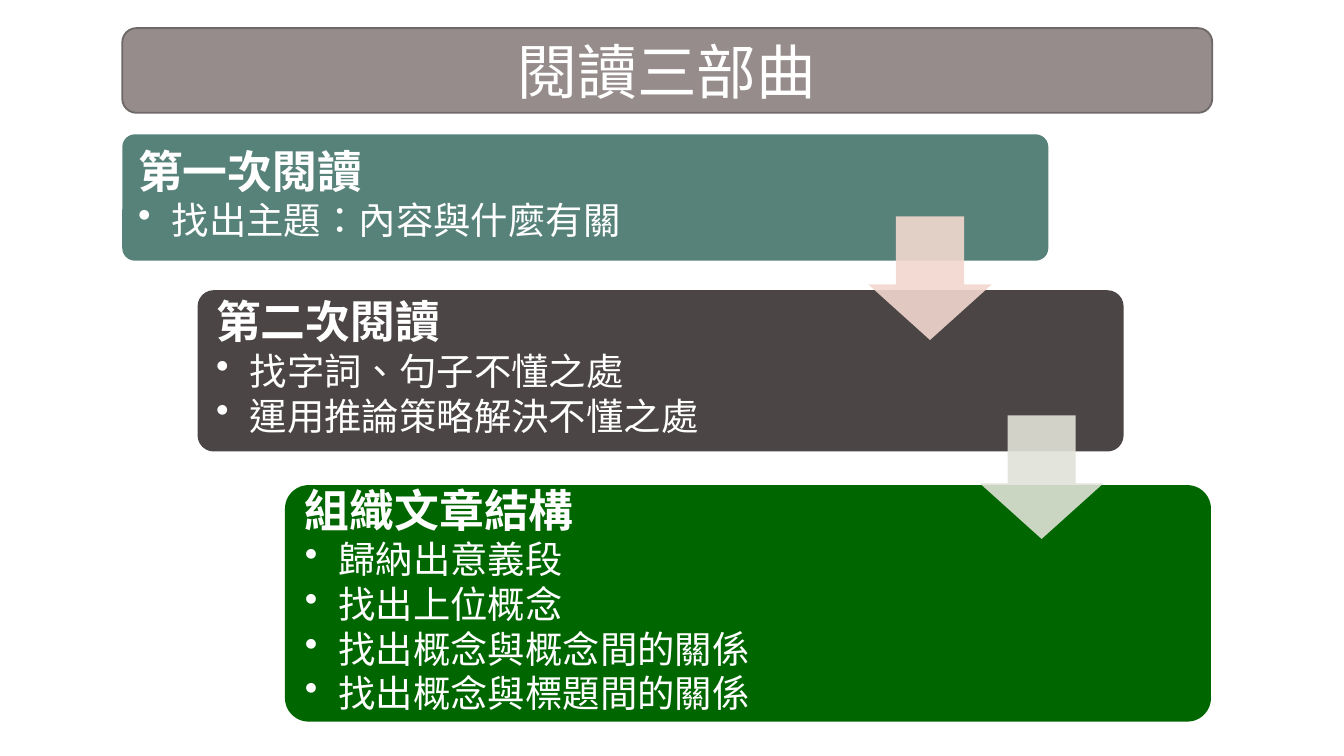
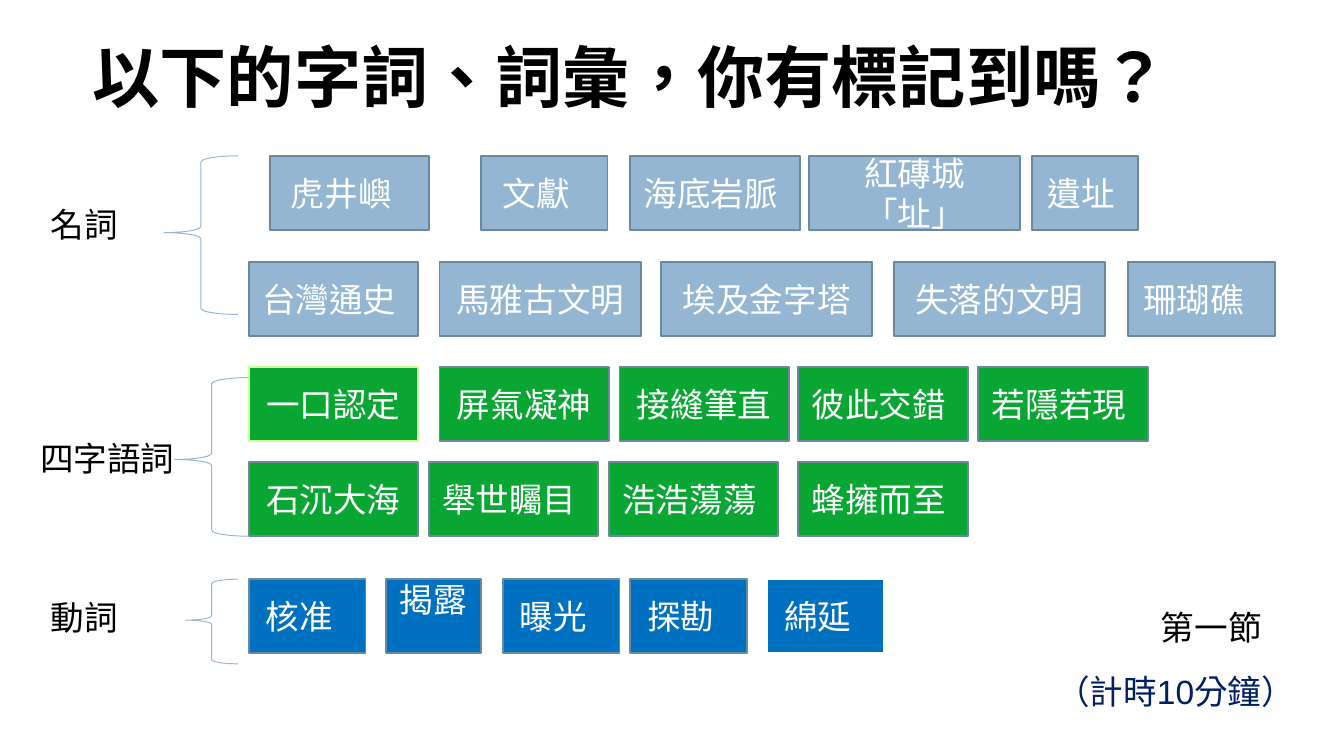
"""Build two slides on reading in three steps and on marking vocabulary."""
from lxml import etree
from pptx import Presentation
from pptx.dml.color import RGBColor
from pptx.enum.shapes import MSO_SHAPE
from pptx.enum.text import MSO_ANCHOR, MSO_AUTO_SIZE, PP_ALIGN
from pptx.oxml.ns import qn
from pptx.util import Inches, Pt

FONT = "Arial"
LANGUAGE = "zh-TW"
WHITE = RGBColor(0xFF, 0xFF, 0xFF)
BLACK = RGBColor(0x00, 0x00, 0x00)
NAVY = RGBColor(0x00, 0x20, 0x60)
TAUPE = RGBColor(0x96, 0x8C, 0x8C)
TAUPE_EDGE = RGBColor(0x6F, 0x68, 0x68)
TEAL = RGBColor(0x57, 0x82, 0x79)
CHARCOAL = RGBColor(0x4C, 0x45, 0x45)
DARK_GREEN = RGBColor(0x00, 0x66, 0x00)
PINK = RGBColor(0xF2, 0xD8, 0xCF)
SAGE = RGBColor(0xE1, 0xE2, 0xD8)
SKY = RGBColor(0x94, 0xB6, 0xD2)
SLATE = RGBColor(0x6D, 0x87, 0x9B)
GREEN = RGBColor(0x0A, 0xA6, 0x33)
BLUE = RGBColor(0x00, 0x70, 0xC0)
LIME = RGBColor(0xCC, 0xFF, 0x99)

CARD_WIDTH = 6.89
STEPS = [
    (0.91, 1, 0.94, TEAL, (0.93, 1.03, 5.39, 0.88),
     "第一次閱讀", ["找出主題：內容與什麼有關"]),
    (1.47, 2.16, 1.2, CHARCOAL, (1.51, 2.19, 5.29, 1.13),
     "第二次閱讀", ["找字詞、句子不懂之處", "運用推論策略解決不懂之處"]),
    (2.12, 3.61, 1.76, DARK_GREEN, (2.17, 3.66, 5.26, 1.66),
     "組織文章結構",
     ["歸納出意義段", "找出上位概念", "找出概念與概念間的關係", "找出概念與標題間的關係"]),
]
STEP_ARROWS = [(6.46, 1.61, PINK), (7.29, 3.09, SAGE)]

WORD_HEIGHT = 0.55
WORD_ROWS = [
    (1.16, SKY, [("虎井嶼", 2.01, 1.18), ("文獻", 3.58, 0.94), ("海底岩脈", 4.69, 1.26),
                 ("紅磚城「址」", 6.02, 1.57), ("遺址", 7.68, 0.79)]),
    (1.95, SKY, [("台灣通史", 1.85, 1.26), ("馬雅古文明", 3.27, 1.5), ("埃及金字塔", 4.92, 1.57),
                 ("失落的文明", 6.65, 1.57), ("珊瑚礁", 8.39, 1.1)]),
    (2.73, GREEN, [("一口認定", 1.85, 1.26), ("屏氣凝神", 3.27, 1.26), ("接縫筆直", 4.61, 1.26),
                   ("彼此交錯", 5.94, 1.26), ("若隱若現", 7.28, 1.26)]),
    (3.44, GREEN, [("石沉大海", 1.85, 1.26), ("舉世矚目", 3.19, 1.26), ("浩浩蕩蕩", 4.53, 1.26),
                   ("蜂擁而至", 5.94, 1.26)]),
    (4.31, BLUE, [("核准", 1.85, 0.87), ("揭露", 2.87, 0.71), ("曝光", 3.74, 0.87),
                  ("探勘", 4.69, 0.87), ("綿延", 5.71, 0.87)]),
]
CENTRED_WORDS = {"紅磚城「址」", "馬雅古文明", "埃及金字塔", "失落的文明",
                 "一口認定", "屏氣凝神", "接縫筆直", "石沉大海", "揭露"}
SPECIAL_EDGES = {"一口認定": LIME, "綿延": WHITE}
TIGHT_WIDTHS = {0.79, 1.26}
RAISED_FRAME = {"vertical_anchor": MSO_ANCHOR.TOP, "margin_top": 0}

BRACES = [
    ((1.22, 1.16, 0.55, 1.18), 0.484),
    ((1.3, 2.81, 0.55, 1.18), 0.516),
    ((1.38, 4.31, 0.39, 0.63), 0.484),
]
LABELS = [
    ("名詞", (0.28, 1.47, 1.02, 0.4), BLACK),
    ("四字語詞", (0.2, 3.21, 1.26, 0.4), BLACK),
    ("動詞", (0.28, 4.39, 1.02, 0.4), BLACK),
    ("第一節", (8.54, 4.47, 1.26, 0.4), BLACK),
    ("（計時10分鐘）", (7.76, 4.94, 2, 0.4), NAVY),
]


def apply_format(target, values):
    """Set every attribute named in values on target."""
    for name, value in values.items():
        setattr(target, name, value)


def add_run(paragraph, text, size, color, bold=False):
    """Append one formatted run to a paragraph."""
    run = paragraph.add_run()
    run.text = text
    apply_format(run.font, {"name": FONT, "size": Pt(size), "bold": bold})
    run.font.color.rgb = color
    run._r.get_or_add_rPr().set("lang", LANGUAGE)


def add_figure(slide, kind, place, fill=None, edge=None, edge_width=1, adjust=()):
    """Add a flat preset shape with optional fill, edge and adjustments."""
    figure = slide.shapes.add_shape(kind, *map(Inches, place))
    figure.shadow.inherit = False
    for index, value in enumerate(adjust):
        figure.adjustments[index] = value
    if fill is None:
        figure.fill.background()
    else:
        figure.fill.solid()
        figure.fill.fore_color.rgb = fill
    if edge is None:
        figure.line.fill.background()
    else:
        figure.line.color.rgb = edge
        figure.line.width = Pt(edge_width)
    return figure


def write_centred(figure, text, size):
    """Write white text in the middle of a shape."""
    frame = figure.text_frame
    apply_format(frame, {"word_wrap": True, "vertical_anchor": MSO_ANCHOR.MIDDLE})
    paragraph = frame.paragraphs[0]
    paragraph.alignment = PP_ALIGN.CENTER
    add_run(paragraph, text, size, WHITE)


def add_label(slide, text, place, size, color, bold=False):
    """Add a one-paragraph text box that grows with its text."""
    frame = slide.shapes.add_textbox(*map(Inches, place)).text_frame
    apply_format(frame, {"word_wrap": True, "auto_size": MSO_AUTO_SIZE.SHAPE_TO_FIT_TEXT})
    add_run(frame.paragraphs[0], text, size, color, bold)


def add_bullet(paragraph):
    """Give a paragraph a hanging round bullet."""
    paragraph.level = 1
    properties = paragraph._p.get_or_add_pPr()
    properties.set("marL", str(Inches(0.25)))
    properties.set("indent", str(-Inches(0.25)))
    etree.SubElement(properties, qn("a:buChar")).set("char", "•")


def add_step(slide, left, top, height, fill, text_place, heading, tasks):
    """Add a reading step: rounded card, heading and bulleted tasks."""
    add_figure(slide, MSO_SHAPE.ROUNDED_RECTANGLE, (left, top, CARD_WIDTH, height),
               fill, adjust=(0.1,))
    frame = slide.shapes.add_textbox(*map(Inches, text_place)).text_frame
    apply_format(frame, {
        "word_wrap": True, "vertical_anchor": MSO_ANCHOR.MIDDLE,
        "margin_top": Inches(0.1), "margin_bottom": Inches(0.1),
    })
    title = frame.paragraphs[0]
    title.line_spacing = Pt(24)
    add_run(title, heading, 24, WHITE, bold=True)
    for task in tasks:
        paragraph = frame.add_paragraph()
        paragraph.line_spacing = Pt(24)
        add_bullet(paragraph)
        add_run(paragraph, task, 20, WHITE)


def add_step_arrow(slide, left, top, fill):
    """Add a slightly transparent arrow leading to the next step."""
    arrow = add_figure(slide, MSO_SHAPE.DOWN_ARROW, (left, top, 0.92, 0.92),
                       fill, adjust=(0.55, 0.45))
    color = arrow._element.spPr.find(qn("a:solidFill")).find(qn("a:srgbClr"))
    etree.SubElement(color, qn("a:alpha")).set("val", "90000")


def add_word(slide, word, left, top, width, fill):
    """Add one vocabulary box, its word centred or slightly to the left."""
    box = add_figure(slide, MSO_SHAPE.FLOWCHART_PROCESS, (left, top, width, WORD_HEIGHT),
                     fill, SPECIAL_EDGES.get(word, SLATE))
    write_centred(box, word, 18)
    if word not in CENTRED_WORDS:
        shift = 0.03 if width in TIGHT_WIDTHS else 0.06
        apply_format(box.text_frame, {"margin_left": Inches(0.1 - shift),
                                      "margin_right": Inches(0.1 + shift)})
    if word == "揭露":
        apply_format(box.text_frame, RAISED_FRAME)


def build_reading_steps(slide):
    """Fill the slide on the three readings."""
    for step in STEPS:
        add_step(slide, *step)
    for arrow in STEP_ARROWS:
        add_step_arrow(slide, *arrow)
    banner = add_figure(slide, MSO_SHAPE.ROUNDED_RECTANGLE, (0.91, 0.21, 8.11, 0.63),
                        TAUPE, TAUPE_EDGE)
    write_centred(banner, "閱讀三部曲", 32)


def build_vocabulary(slide):
    """Fill the slide on words to mark, grouped by kind."""
    add_label(slide, "以下的字詞、詞彙，你有標記到嗎？", (0.59, 0.21, 8.03, 0.71), 36, BLACK, bold=True)
    for top, fill, words in WORD_ROWS:
        for word, left, width in words:
            add_word(slide, word, left, top, width, fill)
    for place, tip in BRACES:
        add_figure(slide, MSO_SHAPE.LEFT_BRACE, place, edge=SKY, edge_width=0.5,
                   adjust=(0.083, tip))
    for text, place, color in LABELS:
        add_label(slide, text, place, 18, color)


def main():
    """Create and save the presentation."""
    deck = Presentation()
    apply_format(deck, {"slide_width": Inches(10), "slide_height": Inches(10) * 9 // 16})
    blank = deck.slide_layouts[6]
    for build in (build_reading_steps, build_vocabulary):
        build(deck.slides.add_slide(blank))
    deck.save("out.pptx")


if __name__ == "__main__":
    main()
